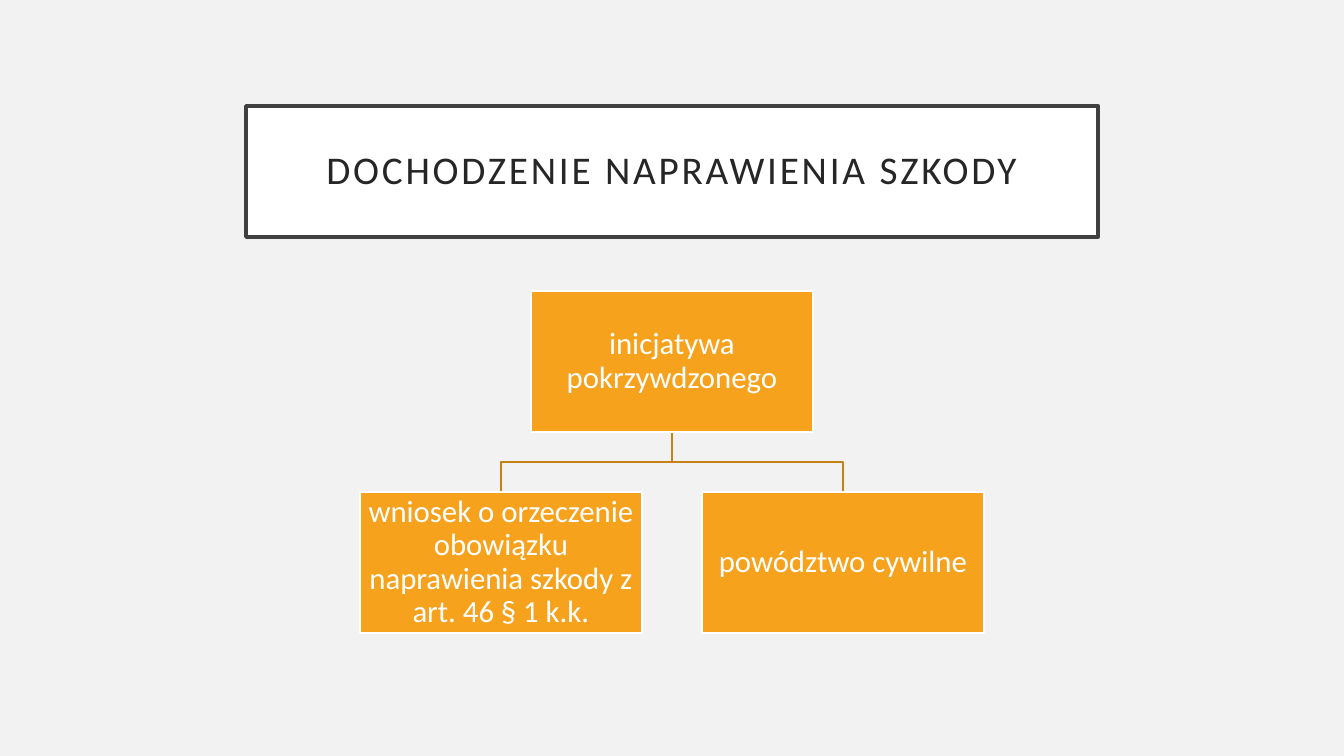
from pptx import Presentation
from pptx.dml.color import RGBColor
from pptx.enum.shapes import MSO_SHAPE
from pptx.enum.text import MSO_ANCHOR, MSO_AUTO_SIZE, PP_ALIGN
from pptx.util import Emu, Pt

PX = 914400 / 100.8
COLORS = {
    "background": "F2F2F2", "white": "FFFFFF", "frame": "404040",
    "title": "262626", "box": "F6A21D", "branch": "C58217",
}


def px(*lengths):
    return [Emu(round(length * PX)) for length in lengths]


def style(shape, text, fill, line, line_width, font_color, size, inset):
    shape.fill.solid()
    shape.fill.fore_color.rgb = RGBColor.from_string(COLORS[fill])
    shape.line.color.rgb = RGBColor.from_string(COLORS[line])
    shape.line.width = Pt(line_width)
    frame = shape.text_frame
    frame.text = text
    frame.word_wrap = True
    frame.auto_size = MSO_AUTO_SIZE.NONE
    frame.vertical_anchor = MSO_ANCHOR.MIDDLE
    frame.margin_left, frame.margin_top, frame.margin_right, frame.margin_bottom = px(*[inset] * 4)
    paragraph = frame.paragraphs[0]
    paragraph.alignment = PP_ALIGN.CENTER
    paragraph.line_spacing = 0.9
    paragraph.font.name = "Calibri"
    paragraph.font.size = Pt(size)
    paragraph.font.color.rgb = RGBColor.from_string(COLORS[font_color])


prs = Presentation()
prs.slide_width, prs.slide_height = px(1344, 756)
slide = prs.slides.add_slide(prs.slide_layouts[5])
slide.background.fill.solid()
slide.background.fill.fore_color.rgb = RGBColor.from_string(COLORS["background"])

# Title
title = slide.shapes.title
title.left, title.top, title.width, title.height = px(246, 106, 852, 131)
style(title, "DOCHODZENIE NAPRAWIENIA SZKODY", "white", "frame", 2.5, "title", 28, 20)
title.text_frame.paragraphs[0].runs[0].font._element.set("spc", "200")

# Hierarchy: the initiative above its two routes
BOX_W, BOX_H = 282, 141
CENTER, OFFSET = 672, 171
ROOT_TOP, ROUTE_TOP = 291, 492
ROOT_BOTTOM = ROOT_TOP + BOX_H
FORK = (ROOT_BOTTOM + ROUTE_TOP) // 2
left_route, right_route = CENTER - OFFSET, CENTER + OFFSET

# Branches
for route in (right_route, left_route):
    builder = slide.shapes.build_freeform(CENTER, ROOT_BOTTOM, scale=PX)
    builder.add_line_segments([(CENTER, FORK), (route, FORK), (route, ROUTE_TOP)], close=False)
    branch = builder.convert_to_shape()
    branch.shadow.inherit = False
    branch.fill.background()
    branch.line.color.rgb = RGBColor.from_string(COLORS["branch"])
    branch.line.width = Pt(1)

# Boxes
for center, top, text in (
    (CENTER, ROOT_TOP, "inicjatywa pokrzywdzonego"),
    (left_route, ROUTE_TOP, "wniosek o orzeczenie obowiązku naprawienia szkody z art. 46 § 1 k.k."),
    (right_route, ROUTE_TOP, "powództwo cywilne"),
):
    box = slide.shapes.add_shape(MSO_SHAPE.RECTANGLE, *px(center - BOX_W // 2, top, BOX_W, BOX_H))
    box.shadow.inherit = False
    style(box, text, "box", "white", 1, "white", 22, 2)

prs.save("out.pptx")
